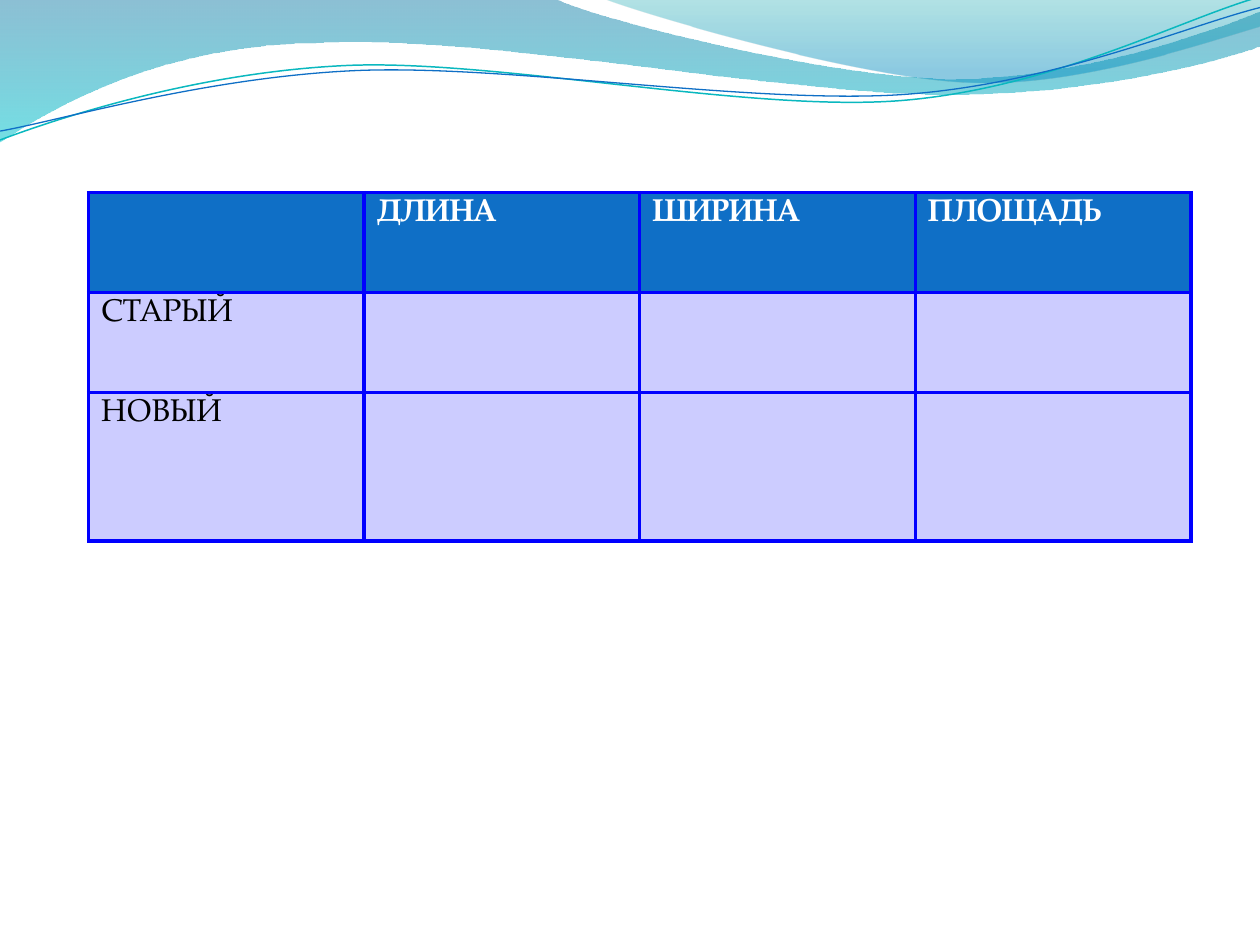
from lxml.etree import SubElement
from pptx import Presentation
from pptx.dml.color import RGBColor
from pptx.oxml.ns import qn
from pptx.util import Pt

WHITE = RGBColor(0xFF, 0xFF, 0xFF)
BLACK = RGBColor(0, 0, 0)
BLUE = RGBColor(0x0F, 0x6F, 0xC6)
TEAL = RGBColor(0x0A, 0xB8, 0xBF)
LAVENDER = RGBColor(0xCC, 0xCC, 0xFF)
BORDER = RGBColor(0, 0, 0xFF)
DEEP_BLUE = RGBColor(0x00, 0x74, 0xA1)
CYAN = RGBColor(0x00, 0xC6, 0xCF)
SEA_GREEN = RGBColor(0x00, 0xA1, 0xA9)
SKY_BLUE = RGBColor(0x00, 0x8B, 0xBF)
FONT = "TeX Gyre Pagella"

# An outline is a start point, then lines (x, y) and cubic curves (three points flattened).
BACK_WAVE = [
    (0, -0.7), (317, -0.7),
    (343, 12, 478, 45, 546, 45), (614, 45, 690, 19, 720, 6.5), (720.7, 26),
    (708, 32, 626, 55, 537, 54), (448, 54, 275, 20, 185, 24.5),
    (93, 25, 33, 60, -0.7, 81.4), (0, -0.7),
]
FRONT_WAVE = [
    (345, -0.7), (366.5, 8, 491, 44.6, 553.7, 46.8),
    (616, 49.7, 692, 23, 720, 15), (720, 0), (345, -0.7),
]
TEAL_LINE = [
    (0, 80), (34.6, 67, 114, 41, 199.4, 37.4),
    (284, 34, 427, 64, 513.4, 57.6), (600, 51, 675, 11, 718.6, -1.4),
]
BLUE_LINE = [
    (0, 74.9), (33.8, 69, 118, 44, 203.8, 40.3),
    (290, 36.7, 430, 59.8, 516.2, 54), (602, 48, 677.5, 15, 720, 4.3),
]
ROWS = [
    ["", "ДЛИНА", "ШИРИНА", "ПЛОЩАДЬ"],
    ["СТАРЫЙ", "", "", ""],
    ["НОВЫЙ", "", "", ""],
]


def add_outline(page, left, top, outline, closed):
    """Draw the outline, turning each run of three control points into one curve."""
    points = [(Pt(left + x), Pt(top + y))
              for segment in outline
              for x, y in zip(segment[::2], segment[1::2])]
    builder = page.shapes.build_freeform(*points[0])
    builder.add_line_segments(points[1:], close=closed)
    shape = builder.convert_to_shape()
    shape.shadow.inherit = False

    lines = iter(shape._element.xpath(".//a:lnTo"))
    for segment in outline[1:]:
        first = next(lines)
        if len(segment) == 6:
            first.tag = qn("a:cubicBezTo")
            for _ in range(2):
                control = next(lines)
                control.getparent().remove(control)
                first.append(control[0])
    return shape


def add_wave(page, left, top, outline, stops):
    """Add a filled wave; each stop is a position, colour and opacity in percent."""
    wave = add_outline(page, left, top, outline, True)
    wave.line.fill.background()
    wave.fill.gradient()
    wave.fill.gradient_angle = 270
    for stop, (position, color, _) in zip(wave.fill.gradient_stops, stops):
        stop.position = position
        stop.color.rgb = color
    colors = wave._element.xpath(".//a:gs/a:srgbClr")
    for element, (_, _, opacity) in zip(colors, stops):
        SubElement(element, qn("a:alpha"), val=str(opacity * 1000))


def add_header_waves(page, left, top):
    add_wave(page, left, top, BACK_WAVE, [(0, DEEP_BLUE, 45), (1, CYAN, 55)])
    add_wave(page, left, top, FRONT_WAVE, [(0, SEA_GREEN, 30), (0.8, SKY_BLUE, 45)])
    for outline, color, width in ((TEAL_LINE, TEAL, 0.85), (BLUE_LINE, BLUE, 0.75)):
        curve = add_outline(page, left, top, outline, False)
        curve.fill.background()
        curve.line.color.rgb = color
        curve.line.width = Pt(width)


def set_borders(cell, color, width):
    properties = cell._tc.get_or_add_tcPr()
    for index, side in enumerate(("a:lnL", "a:lnR", "a:lnT", "a:lnB")):
        line = properties.makeelement(qn(side), {"w": str(Pt(width))})
        fill = SubElement(line, qn("a:solidFill"))
        SubElement(fill, qn("a:srgbClr"), val=str(color))
        properties.insert(index, line)


def add_size_table(page, left, top, width, row_heights):
    frame = page.shapes.add_table(
        len(ROWS), len(ROWS[0]), Pt(left), Pt(top), Pt(width), Pt(sum(row_heights)))
    table = frame.table
    for row, height in zip(table.rows, row_heights):
        row.height = Pt(height)
    for row_index, texts in enumerate(ROWS):
        is_header = row_index == 0
        for column_index, text in enumerate(texts):
            cell = table.cell(row_index, column_index)
            cell.fill.solid()
            cell.fill.fore_color.rgb = BLUE if is_header else LAVENDER
            set_borders(cell, BORDER, 2.25)
            if not text:
                continue
            cell.text = text
            font = cell.text_frame.paragraphs[0].font
            font.name = FONT
            font.size = Pt(18)
            font.bold = is_header
            font.color.rgb = WHITE if is_header else BLACK


def main():
    deck = Presentation()
    deck.slide_width, deck.slide_height = Pt(720), Pt(540)
    page = deck.slides.add_slide(deck.slide_layouts[6])
    add_header_waves(page, 0, 0)
    add_size_table(page, 50.6, 110, 630, [57.1, 57.1, 85])
    deck.save("out.pptx")


if __name__ == "__main__":
    main()
